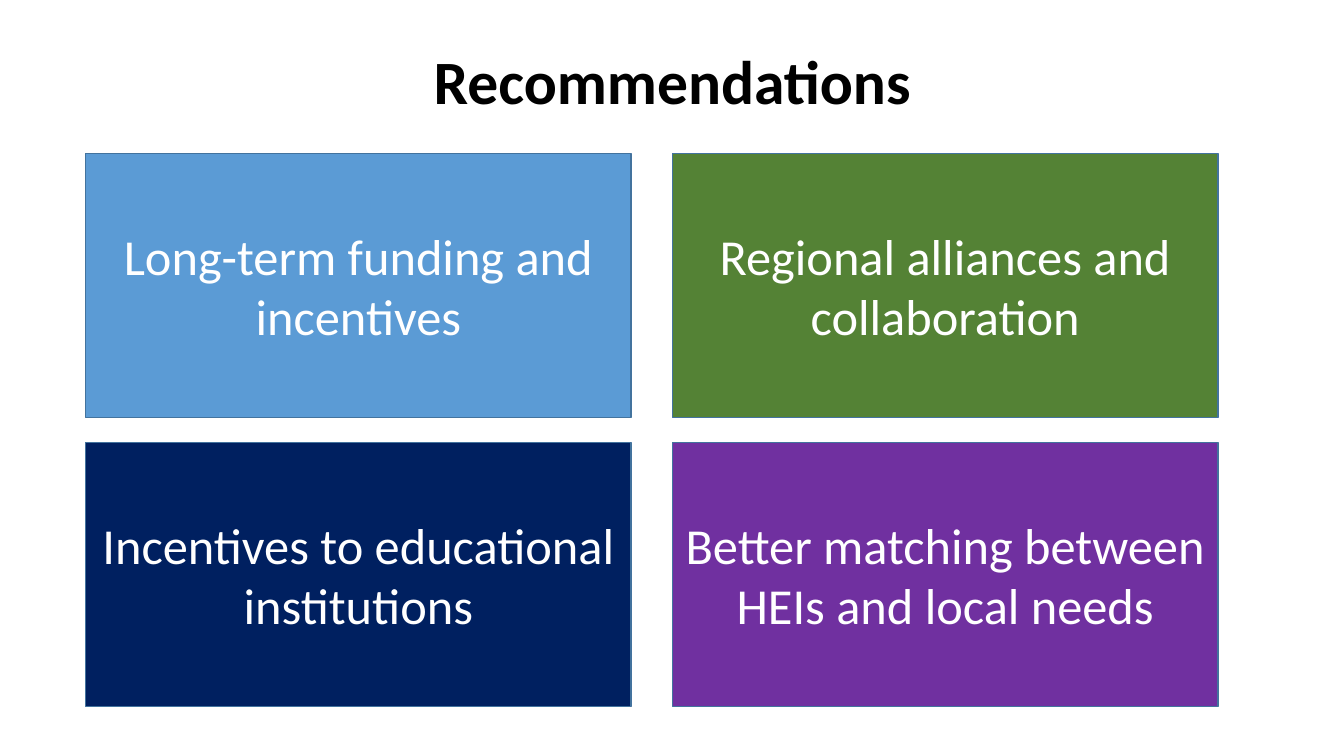
import pptx
import pptx.util
import pptx.dml.color
import pptx.enum.shapes
import pptx.enum.text

Inches = pptx.util.Inches
Pt = pptx.util.Pt
RGBColor = pptx.dml.color.RGBColor

BLACK = RGBColor(0x00, 0x00, 0x00)
WHITE = RGBColor(0xFF, 0xFF, 0xFF)
BLUE = RGBColor(0x5B, 0x9B, 0xD5)
GREEN = RGBColor(0x54, 0x82, 0x35)
NAVY = RGBColor(0x00, 0x20, 0x60)
PURPLE = RGBColor(0x70, 0x30, 0xA0)
OUTLINE = RGBColor(0x43, 0x73, 0x9E)


def set_text(sp, text, size, color, bold=False):
    tf = sp.text_frame
    tf.word_wrap = True
    tf.vertical_anchor = pptx.enum.text.MSO_ANCHOR.MIDDLE
    tf.text = text
    p = tf.paragraphs[0]
    p.alignment = pptx.enum.text.PP_ALIGN.CENTER
    font = p.runs[0].font
    font.name = "Calibri"
    font.size = Pt(size)
    font.bold = bold
    font.color.rgb = color
    return p


prs = pptx.Presentation()
prs.slide_width = Inches(13.33)
prs.slide_height = Inches(7.5)
s = prs.slides.add_slide(prs.slide_layouts[6])

title = s.shapes.add_textbox(Inches(0.92), Inches(0.4), Inches(11.5), Inches(0.87))
p = set_text(title, "Recommendations", 44, BLACK, bold=True)
p.line_spacing = 0.9

recommendations = [
    ("Long-term funding and incentives", BLUE),
    ("Regional alliances and collaboration", GREEN),
    ("Incentives to educational institutions", NAVY),
    ("Better matching between HEIs and local needs", PURPLE),
]
for i, (text, color) in enumerate(recommendations):
    row, col = divmod(i, 2)
    sp = s.shapes.add_shape(
        pptx.enum.shapes.MSO_SHAPE.RECTANGLE,
        Inches(0.85 + 5.82 * col), Inches(1.52 + 2.87 * row),
        Inches(5.41), Inches(2.62))
    sp.shadow.inherit = False
    sp.fill.solid()
    sp.fill.fore_color.rgb = color
    sp.line.color.rgb = OUTLINE
    sp.line.width = Pt(1)
    set_text(sp, text, 36, WHITE)

prs.save("out.pptx")
